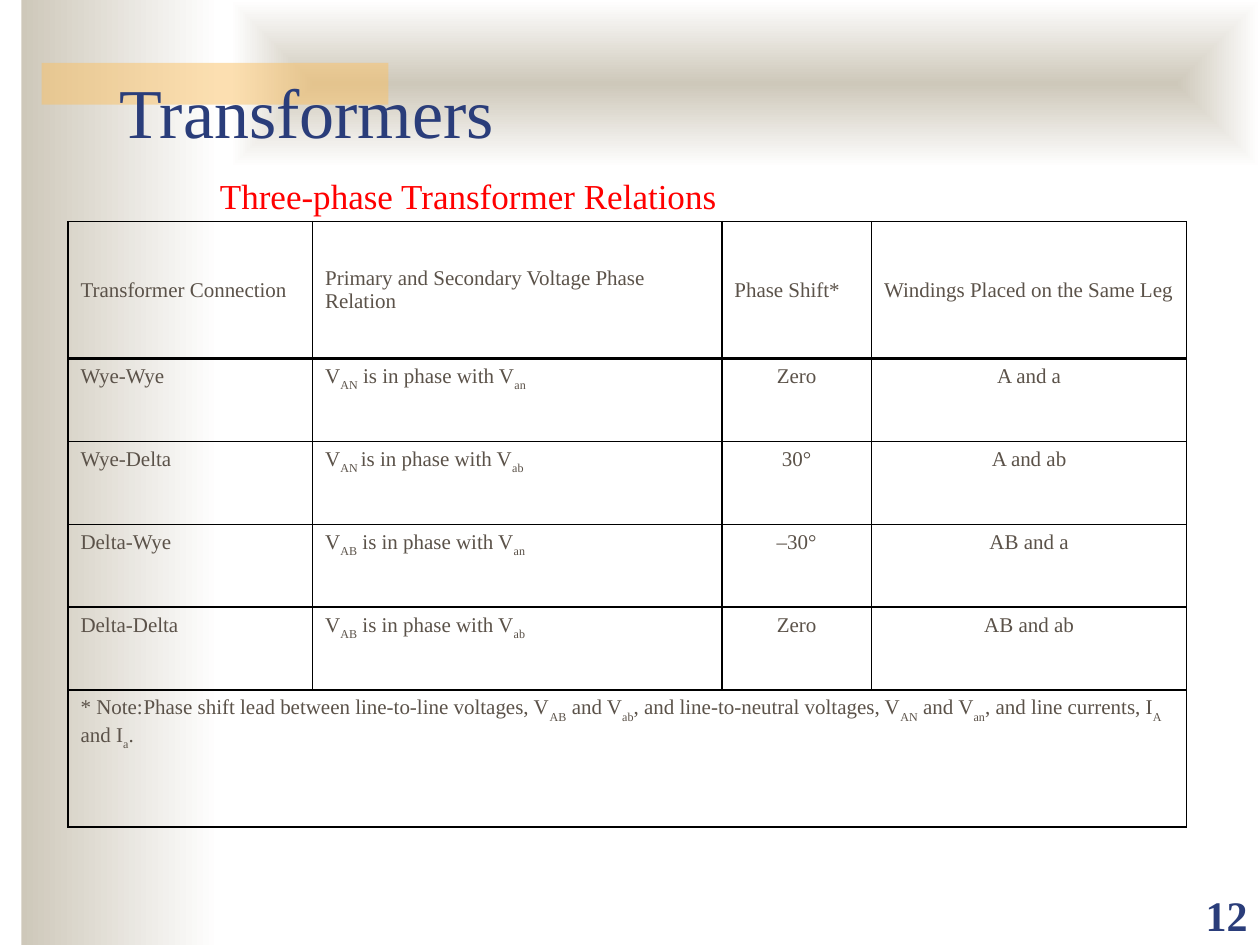
from lxml import etree
from pptx import Presentation
from pptx.dml.color import RGBColor
from pptx.enum.shapes import MSO_SHAPE
from pptx.enum.text import MSO_ANCHOR, PP_ALIGN
from pptx.oxml.ns import qn
from pptx.util import Cm, Pt

RECTANGLE = MSO_SHAPE.RECTANGLE
LEFT, CENTER, RIGHT = PP_ALIGN.LEFT, PP_ALIGN.CENTER, PP_ALIGN.RIGHT
TOP, MIDDLE, BOTTOM = MSO_ANCHOR.TOP, MSO_ANCHOR.MIDDLE, MSO_ANCHOR.BOTTOM

FONT = "Times New Roman"
NAVY, BROWN, RED = "2A3D7A", "5B5249", "FF0000"
SAND, WHITE, AMBER, BLACK = "CEC8BA", "FFFFFF", "FAC164", "000000"

# Subscripts stand between bars
HEADERS = ["Transformer Connection", "Primary and Secondary Voltage Phase Relation",
           "Phase Shift*", "Windings Placed on the Same Leg"]
CONNECTIONS = [
    ["Wye-Wye", "V|AN| is in phase with V|an|", "Zero", "A and a"],
    ["Wye-Delta", "V|AN |is in phase with V|ab|", "30°", "A and ab"],
    ["Delta-Wye", "V|AB| is in phase with V|an|", "–30°", "AB and a"],
    ["Delta-Delta", "V|AB| is in phase with V|ab|", "Zero", "AB and ab"],
]
NOTE = ("* Note:\tPhase shift lead between line-to-line voltages, V|AB| and V|ab|, "
        "and line-to-neutral voltages, V|AN| and V|an|, and line currents, I|A| and I|a|.")
COLUMN_WIDTHS = [4.93, 8.25, 3.02, 6.35]
ROW_HEIGHTS = [2.76] + [1.67] * len(CONNECTIONS) + [2.76]


def rgb(hex_color):
    return RGBColor.from_string(hex_color)


def style_run(run, size, color, bold=False):
    run.font.name = FONT
    run.font.size = Pt(size)
    run.font.bold = bold
    run.font.color.rgb = rgb(color)


def write_line(frame, text, size, color, align, anchor, bold=False):
    frame.text = text
    frame.vertical_anchor = anchor
    line = frame.paragraphs[0]
    line.alignment = align
    style_run(line.runs[0], size, color, bold)


def add_text(slide, box, text, *style, wrap=True, bold=False):
    frame = slide.shapes.add_textbox(*map(Cm, box)).text_frame
    frame.word_wrap = wrap
    write_line(frame, text, *style, bold=bold)


def add_panel(slide, box):
    panel = slide.shapes.add_shape(RECTANGLE, *map(Cm, box))
    panel.shadow.inherit = False
    panel.line.fill.background()
    return panel


def add_fading_panel(slide, box, from_center=False):
    panel = add_panel(slide, box)
    panel.fill.gradient()
    panel.fill.gradient_angle = 0
    for stop, color, position in zip(panel.fill.gradient_stops, (SAND, WHITE), (0, 1)):
        stop.color.rgb = rgb(color)
        stop.position = position
    if from_center:
        gradient = panel.element.spPr.find(qn("a:gradFill"))
        gradient.remove(gradient.find(qn("a:lin")))
        shape_path = etree.SubElement(gradient, qn("a:path"), {"path": "shape"})
        etree.SubElement(shape_path, qn("a:fillToRect"), dict.fromkeys("ltrb", "50000"))


def add_translucent_panel(slide, box, color, opacity):
    panel = add_panel(slide, box)
    panel.fill.solid()
    panel.fill.fore_color.rgb = rgb(color)
    tone = panel.element.spPr.find(qn("a:solidFill"))[0]
    etree.SubElement(tone, qn("a:alpha"), {"val": str(opacity * 1000)})


def set_borders(cell, top, bottom):
    properties = cell._tc.get_or_add_tcPr()
    widths = {"lnL": 1, "lnR": 1, "lnT": top, "lnB": bottom}
    for index, (side, width) in enumerate(widths.items()):
        border = etree.Element(qn("a:" + side), {"w": str(Pt(width))})
        fill = etree.SubElement(border, qn("a:solidFill"))
        etree.SubElement(fill, qn("a:srgbClr"), {"val": BLACK})
        properties.insert(index, border)


def write_cell(cell, marked_text, align, anchor):
    cell.vertical_anchor = anchor
    line = cell.text_frame.paragraphs[0]
    line.alignment = align
    for index, part in enumerate(marked_text.split("|")):
        if part:
            run = line.add_run()
            run.text = part
            style_run(run, 12, BROWN)
            if index % 2:
                run.font._element.set("baseline", "-30000")


def add_relations_table(slide, left, top):
    size = (sum(COLUMN_WIDTHS), sum(ROW_HEIGHTS))
    table = slide.shapes.add_table(len(ROW_HEIGHTS), len(COLUMN_WIDTHS),
                                   *map(Cm, (left, top, *size))).table
    table.first_row = table.horz_banding = False
    for column, width in zip(table.columns, COLUMN_WIDTHS):
        column.width = Cm(width)
    for index, (row, height) in enumerate(zip(table.rows, ROW_HEIGHTS)):
        row.height = Cm(height)
        for cell in row.cells:
            cell.fill.background()
            set_borders(cell, 2 if index == 1 else 1, 2 if index == 0 else 1)

    for column, header in enumerate(HEADERS):
        write_cell(table.cell(0, column), header, LEFT, MIDDLE)
    for row, connection in enumerate(CONNECTIONS, 1):
        for column, text in enumerate(connection):
            write_cell(table.cell(row, column), text, LEFT if column < 2 else CENTER, TOP)

    last_row = len(ROW_HEIGHTS) - 1
    note = table.cell(last_row, 0)
    note.merge(table.cell(last_row, len(COLUMN_WIDTHS) - 1))
    write_cell(note, NOTE, LEFT, TOP)


def place_title(slide, box, text):
    title = slide.shapes.title
    title.left, title.top, title.width, title.height = map(Cm, box)
    write_line(title.text_frame, text, 40, NAVY, LEFT, MIDDLE)
    # Bring the title in front of the background panels
    title.element.getparent().append(title.element)


def main():
    deck = Presentation()
    deck.slide_width, deck.slide_height = Cm(25.4), Cm(19.05)
    slide = deck.slides.add_slide(deck.slide_layouts[5])

    # Background
    add_fading_panel(slide, (0.43, 0, 4.01, 19.05))
    add_fading_panel(slide, (4.65, 0, 20.75, 3.38), from_center=True)
    add_translucent_panel(slide, (0.84, 1.27, 6.99, 0.84), AMBER, 50)

    # Slide number and title
    add_text(slide, (22.86, 17.81, 2.54, 1.27), "12", 24, NAVY, RIGHT, BOTTOM, bold=True)
    place_title(slide, (2.16, 1.09, 21.59, 2.26), "Transformers")

    # Table and its heading
    add_relations_table(slide, 1.37, 4.47)
    add_text(slide, (3.61, 3.4, 11.66, 1.09), "Three-phase Transformer Relations",
             20, RED, CENTER, MIDDLE, wrap=False)

    deck.save("out.pptx")


if __name__ == "__main__":
    main()
